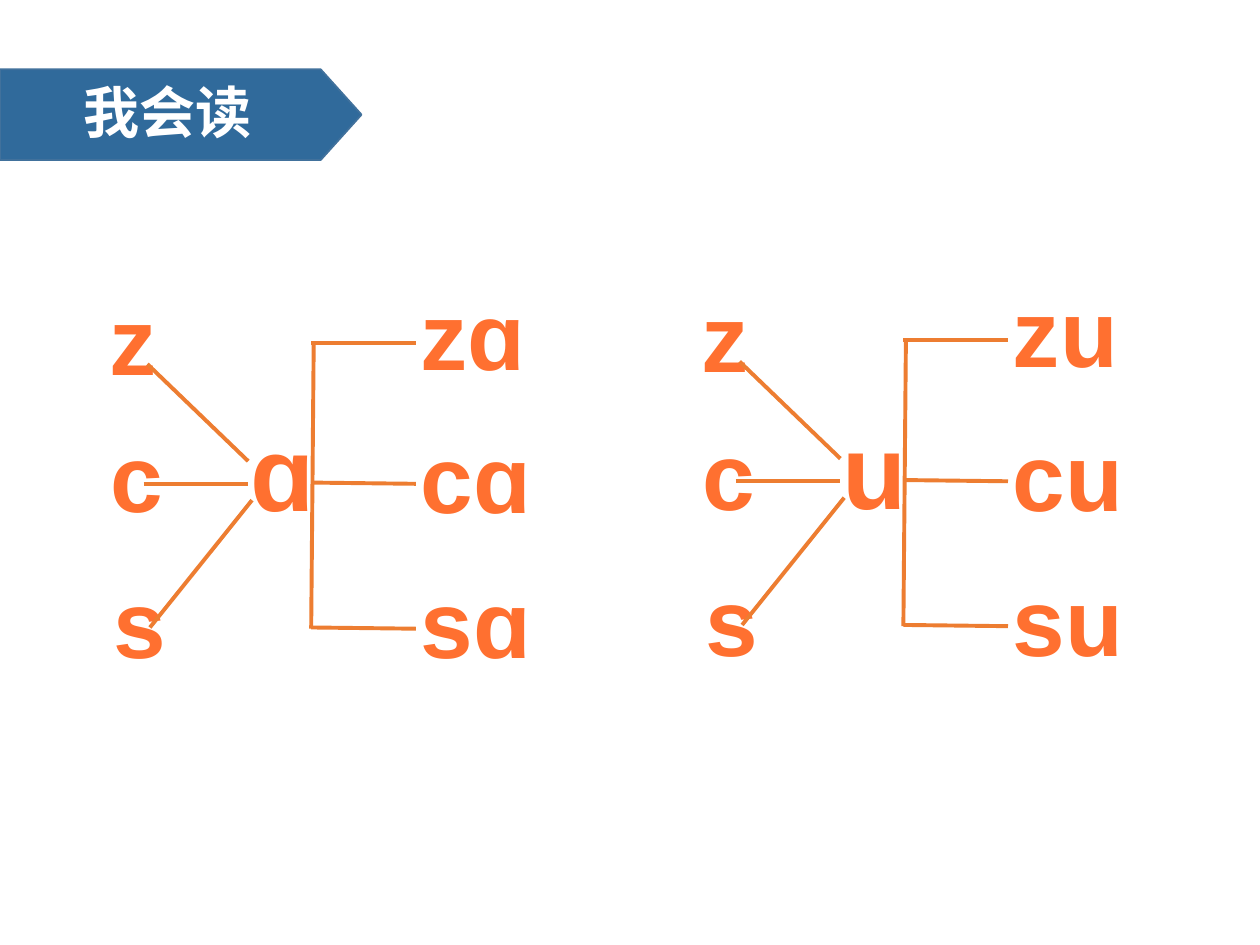
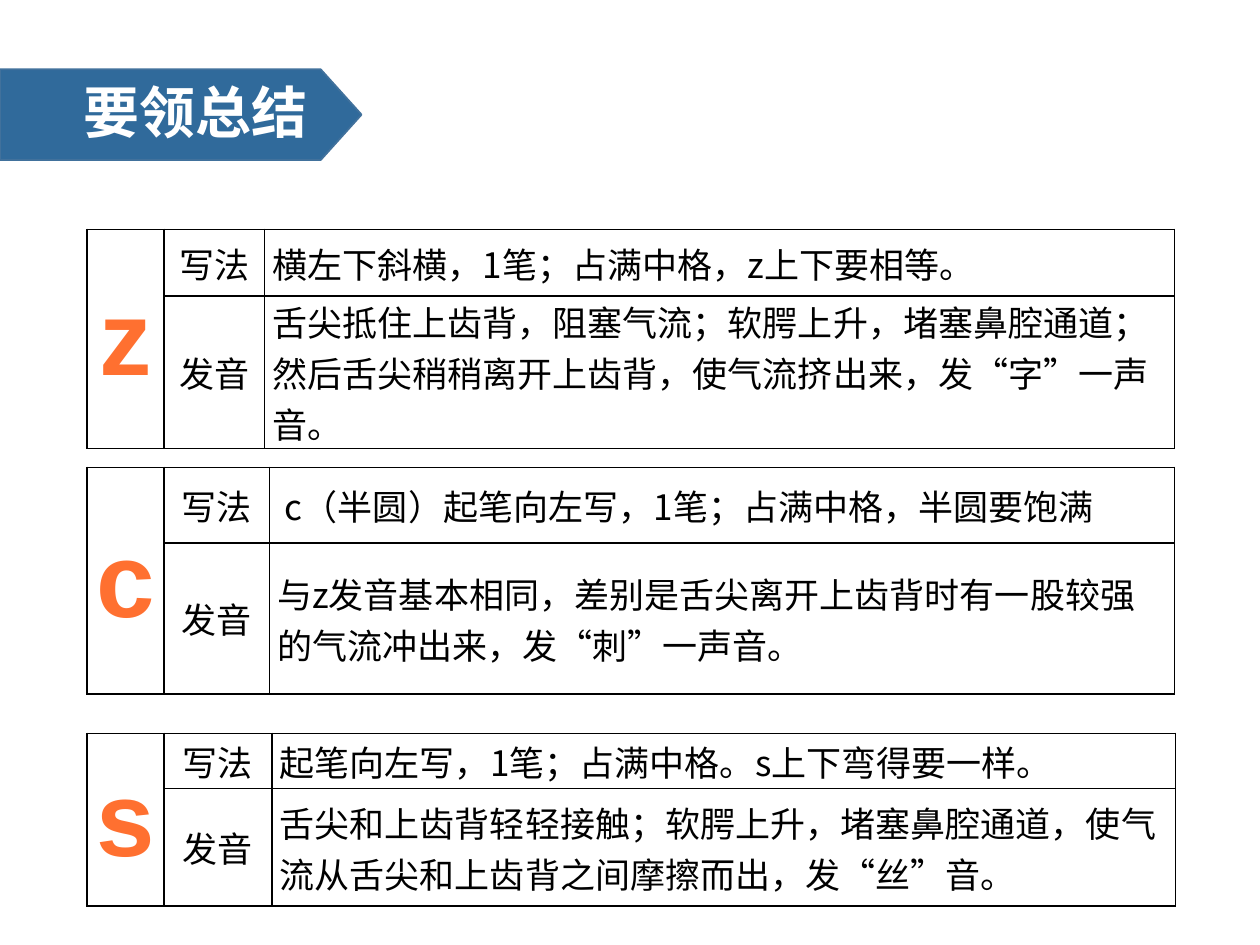
"""Build two pinyin lesson slides: blending z, c, s and a summary of writing and sound."""
import lxml.etree
import pptx
import pptx.dml.color
import pptx.enum.shapes
import pptx.enum.text
import pptx.oxml.ns
import pptx.util

BAND_BLUE = pptx.dml.color.RGBColor(0x30, 0x6A, 0x9B)
BAND_EDGE = pptx.dml.color.RGBColor(0x41, 0x71, 0x9C)
LETTER_ORANGE = pptx.dml.color.RGBColor(0xFF, 0x70, 0x30)
LINE_ORANGE = pptx.dml.color.RGBColor(0xED, 0x7D, 0x31)
WHITE = pptx.dml.color.RGBColor(0xFF, 0xFF, 0xFF)
BLACK = pptx.dml.color.RGBColor(0, 0, 0)

CHINESE = "Noto Sans CJK SC"
LATIN = "Arial"
LABEL_LATIN = "Calibri"
EMU_PER_PX = 9144
TITLE_ONLY = 5

INITIALS = [("z", 77, 218, 58), ("c", 78, 327, 62), ("s", 80, 443, 62)]
SYLLABLE_BOXES = [(214, 104), (328, 109), (443, 109)]
STROKES = [
    (119, 498, 200, 397), (117, 289, 197, 366), (114, 384, 197, 384),
    (247, 272, 330, 272), (247, 383, 330, 384), (247, 498, 330, 499),
    (249, 272, 247, 499),
]
DIAGRAMS = [("ɑ", 0, 0), ("u", 470, -2)]

SUMMARIES = [
    ("z", 182, (61, 80, 722), (53, 105), LABEL_LATIN,
     "横左下斜横，1笔；占满中格，z上下要相等。",
     "舌尖抵住上齿背，阻塞气流；软腭上升，堵塞鼻腔通道；然后舌尖稍稍离开上齿背，使气流挤出来，发“字”一声音。"),
    ("c", 371, (61, 84, 718), (60, 120), CHINESE,
     " c（半圆）起笔向左写，1笔；占满中格，半圆要饱满",
     "与z发音基本相同，差别是舌尖离开上齿背时有一股较强的气流冲出来，发“刺”一声音。"),
    ("s", 582, (61, 86, 717), (44, 79), CHINESE,
     "起笔向左写，1笔；占满中格。s上下弯得要一样。",
     "舌尖和上齿背轻轻接触；软腭上升，堵塞鼻腔通道，使气流从舌尖和上齿背之间摩擦而出，发“丝”音。"),
]


def px(length):
    return pptx.util.Emu(length * EMU_PER_PX)


class Lesson:
    def __init__(self):
        self.deck = pptx.Presentation()
        self.deck.slide_width, self.deck.slide_height = px(1000), px(750)
        self.slide = None

    def add_text(self, paragraph, text, size, color, bold=False, font=CHINESE):
        run = paragraph.add_run()
        run.text = text
        run.font.size = pptx.util.Pt(size)
        run.font.bold = bold
        run.font.color.rgb = color
        run.font.name = font
        east_asian = lxml.etree.SubElement(run._r.get_or_add_rPr(), pptx.oxml.ns.qn("a:ea"))
        east_asian.set("typeface", CHINESE if font == LABEL_LATIN else font)

    def start(self, heading):
        self.slide = self.deck.slides.add_slide(self.deck.slide_layouts[TITLE_ONLY])
        title = self.slide.shapes.title
        title.left, title.top, title.width, title.height = map(px, (56, 64, 211, 55))
        frame = title.text_frame
        frame.auto_size = pptx.enum.text.MSO_AUTO_SIZE.NONE
        frame.word_wrap = True
        frame.vertical_anchor = pptx.enum.text.MSO_ANCHOR.MIDDLE
        paragraph = frame.paragraphs[0]
        paragraph.alignment = pptx.enum.text.PP_ALIGN.LEFT
        paragraph.line_spacing = 0.9
        self.add_text(paragraph, heading, 32, WHITE, bold=True)
        self.band(title)

    def band(self, title):
        band = self.slide.shapes.add_shape(
            pptx.enum.shapes.MSO_SHAPE.PENTAGON, *map(px, (0, 55, 287, 72)))
        band.adjustments[0] = 0.45
        band.shadow.inherit = False
        band.fill.solid()
        band.fill.fore_color.rgb = BAND_BLUE
        band.line.color.rgb = BAND_EDGE
        band.line.width = pptx.util.Pt(1)
        title._element.addprevious(band._element)

    def letters(self, text, left, top, width, height=101, size=54):
        box = self.slide.shapes.add_textbox(*map(px, (left, top, width, height)))
        frame = box.text_frame
        frame.word_wrap = False
        frame.auto_size = pptx.enum.text.MSO_AUTO_SIZE.SHAPE_TO_FIT_TEXT
        self.add_text(frame.paragraphs[0], text, size, LETTER_ORANGE, bold=True, font=LATIN)

    def stroke(self, x1, y1, x2, y2):
        line = self.slide.shapes.add_connector(
            pptx.enum.shapes.MSO_CONNECTOR.STRAIGHT, *map(px, (x1, y1, x2, y2)))
        line.line.color.rgb = LINE_ORANGE
        line.line.width = pptx.util.Pt(2.25)
        lxml.etree.SubElement(line._element.spPr, pptx.oxml.ns.qn("a:effectLst"))

    def blending(self, final, dx, dy):
        self.letters(final, 189 + dx, 318 + dy, 72, height=111, size=60)
        for (initial, left, top, width), (result_top, result_width) in zip(INITIALS, SYLLABLE_BOXES):
            self.letters(initial, left + dx, top + dy, width)
            self.letters(initial + final, 324 + dx, result_top + dy, result_width)
        for x1, y1, x2, y2 in STROKES:
            self.stroke(x1 + dx, y1 + dy, x2 + dx, y2 + dy)

    def format_cell(self, cell):
        cell.margin_left = cell.margin_right = px(6)
        cell.margin_top = cell.margin_bottom = 0
        cell.vertical_anchor = pptx.enum.text.MSO_ANCHOR.MIDDLE
        cell.fill.background()
        properties = cell._tc.get_or_add_tcPr()
        for position, side in enumerate(("lnL", "lnR", "lnT", "lnB")):
            border = lxml.etree.Element(pptx.oxml.ns.qn(f"a:{side}"), w=str(pptx.util.Pt(1)))
            fill = lxml.etree.SubElement(border, pptx.oxml.ns.qn("a:solidFill"))
            lxml.etree.SubElement(fill, pptx.oxml.ns.qn("a:srgbClr"), val=str(BLACK))
            properties.insert(position, border)

    def summary(self, letter, top, widths, heights, label_font, writing, sound):
        table = self.slide.shapes.add_table(
            2, 3, *map(px, (69, top, sum(widths), sum(heights)))).table
        table.first_row = table.horz_banding = False
        for column, width in zip(table.columns, widths):
            column.width = px(width)
        for row, height in zip(table.rows, heights):
            row.height = px(height)
        for cell in table.iter_cells():
            self.format_cell(cell)
        table.cell(0, 0).merge(table.cell(1, 0))
        heading = table.cell(0, 0).text_frame.paragraphs[0]
        heading.alignment = pptx.enum.text.PP_ALIGN.CENTER
        self.add_text(heading, letter, 60, LETTER_ORANGE, bold=True, font=LATIN)
        for row, (label, advice) in enumerate((("写法", writing), ("发音", sound))):
            caption = table.cell(row, 1).text_frame.paragraphs[0]
            caption.alignment = pptx.enum.text.PP_ALIGN.CENTER
            self.add_text(caption, label, 20, BLACK, font=label_font)
            self.add_text(table.cell(row, 2).text_frame.paragraphs[0], advice, 20, BLACK)


def main():
    lesson = Lesson()
    lesson.start("我会读")
    for diagram in DIAGRAMS:
        lesson.blending(*diagram)
    lesson.start("要领总结")
    for summary in SUMMARIES:
        lesson.summary(*summary)
    lesson.deck.save("out.pptx")


if __name__ == "__main__":
    main()
